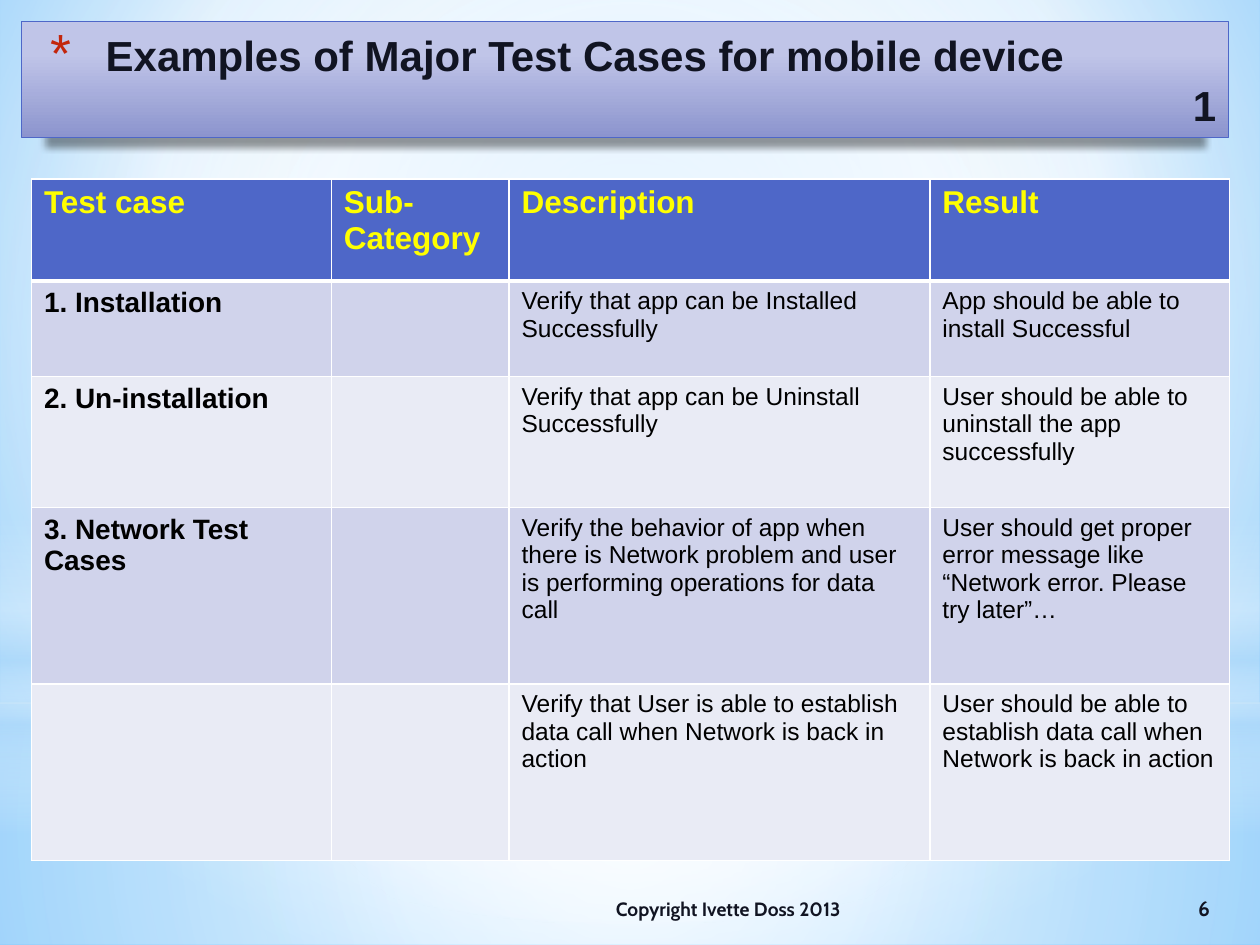
from lxml import etree
from pptx import Presentation
from pptx.dml.color import RGBColor
from pptx.enum import shapes, text
from pptx.oxml.ns import qn
from pptx.util import Inches, Pt

WHITE = RGBColor(0xFF, 0xFF, 0xFF)
SKY = RGBColor(0xB4, 0xDC, 0xFA)
BLUE = RGBColor(0x4E, 0x67, 0xC8)
BAND_DARK = RGBColor(0xD0, 0xD3, 0xEB)
BAND_LIGHT = RGBColor(0xE9, 0xEB, 0xF5)
YELLOW = RGBColor(0xFF, 0xFF, 0x00)
BLACK = RGBColor(0, 0, 0)
INK = RGBColor(0x11, 0x14, 0x22)
RED = RGBColor(0xC3, 0x26, 0x0C)
BACKDROP = [(0, RGBColor(0x9E, 0xD5, 0xFF), 100), (60, WHITE, 100),
            (100, RGBColor(0x5B, 0xB9, 0xFF), 100)]
TITLE_FILL = [(28, RGBColor(0xC0, 0xC5, 0xE8), 100),
              (100, RGBColor(0x8C, 0x94, 0xCE), 100)]

CENTRE = (50, 50, 50, 50)
RECT, OVAL = shapes.MSO_SHAPE.RECTANGLE, shapes.MSO_SHAPE.OVAL
LAYERS = [
    (RECT, (0, 5.58, 10, 1.92),
     [(0, WHITE, 91), (37, WHITE, 76), (100, SKY, 79)], CENTRE),
    (RECT, (0, 0, 10, 5.58),
     [(0, WHITE, 89), (48, WHITE, 62), (100, SKY, 79)], CENTRE),
    (RECT, (0, 4.12, 10, 2.5),
     [(0, WHITE, 0), (29, WHITE, 30), (45, SKY, 40), (55, WHITE, 26),
      (65, SKY, 60), (100, WHITE, 0)], None),
    (OVAL, (0, 1.75, 10, 5.58), [(0, WHITE, 100), (56, WHITE, 0)], CENTRE),
]

COLUMNS = [2.38, 1.41, 3.34, 2.38]
ROW_HEIGHTS = [0.81, 0.76, 1.04, 1.4, 1.4]
ROWS = [
    ["Test case", "Sub-Category", "Description", "Result"],
    ["1. Installation", "", "Verify that app can be Installed Successfully",
     "App should be able to install Successful"],
    ["2. Un-installation", "", "Verify that app can be Uninstall Successfully",
     "User should be able to uninstall the app successfully"],
    ["3. Network Test Cases", "",
     "Verify the behavior of app when there is Network problem and user is "
     "performing operations for data call",
     "User should get proper error message like “Network error. Please try later”…"],
    ["", "",
     "Verify that User is able to establish data call when Network is back in action",
     "User should be able to establish data call when Network is back in action"],
]


def add_child(parent, tag, **attributes):
    return etree.SubElement(parent, qn(tag),
                            {k: str(v) for k, v in attributes.items()})


def add_color(parent, color, alpha=100):
    clr = add_child(parent, "a:srgbClr", val=color)
    if alpha < 100:
        add_child(clr, "a:alpha", val=alpha * 1000)


def set_gradient(parent, stops, focus=None):
    grad = etree.Element(qn("a:gradFill"), rotWithShape="1")
    stop_list = add_child(grad, "a:gsLst")
    for pos, color, alpha in stops:
        add_color(add_child(stop_list, "a:gs", pos=pos * 1000), color, alpha)
    if focus:
        sides = {side: v * 1000 for side, v in zip("ltrb", focus)}
        add_child(add_child(grad, "a:path", path="circle"),
                  "a:fillToRect", **sides)
    else:
        add_child(grad, "a:lin", ang=90 * 60000, scaled=0)
    parent.replace(parent.find(qn("a:solidFill")), grad)


def add_run(p, words, **fmt):
    r = p.add_run()
    r.text = words
    color = fmt.pop("color")
    for name, value in fmt.items():
        setattr(r.font, name, value)
    r.font.color.rgb = color


def add_gradient_shape(s, kind, box, stops, focus=None):
    sp = s.shapes.add_shape(kind, *map(Inches, box))
    sp.shadow.inherit = False
    sp.fill.solid()
    set_gradient(sp._element.spPr, stops, focus)
    sp.line.fill.background()
    return sp


def add_background(s):
    s.background.fill.solid()
    set_gradient(s._element.find(".//" + qn("p:bgPr")), BACKDROP, (20, 10, 20, 60))
    for layer in LAYERS:
        add_gradient_shape(s, *layer)


def add_title(s):
    sp = add_gradient_shape(s, RECT, (0.17, 0.17, 9.58, 0.92), TITLE_FILL)
    sp.line.color.rgb = BLUE
    sp.line.width = Pt(0.75)
    shadow = add_child(sp._element.spPr.find(qn("a:effectLst")), "a:outerShdw",
                       blurRad=Pt(4), dist=Pt(5), dir=5400000,
                       sx=96000, sy=100000, algn="b", rotWithShape=0)
    add_color(shadow, BLACK, 40)
    tf = sp.text_frame
    tf.word_wrap = True
    tf.vertical_anchor = text.MSO_ANCHOR.MIDDLE
    lines = [("Examples of Major Test Cases for mobile device", text.PP_ALIGN.LEFT),
             ("1", text.PP_ALIGN.RIGHT)]
    for i, (words, align) in enumerate(lines):
        p = tf.add_paragraph() if i else tf.paragraphs[0]
        p.alignment = align
        add_run(p, words, size=Pt(24), name="Arial", bold=True, color=INK)
    pPr = tf.paragraphs[0]._p.get_or_add_pPr()
    pPr.set("marL", str(Inches(0.57)))
    pPr.set("indent", str(Inches(-0.44)))
    add_color(add_child(pPr, "a:buClr"), RED)
    add_child(pPr, "a:buSzPct", val=128000)
    add_child(pPr, "a:buFont", typeface="Arial")
    add_child(pPr, "a:buChar", char="*")


def set_borders(cell, widths):
    tcPr = cell._tc.get_or_add_tcPr()
    for i, (side, width) in enumerate(zip("LRTB", widths)):
        ln = etree.Element(qn("a:ln" + side), w=str(Pt(width)))
        add_color(add_child(ln, "a:solidFill"), WHITE)
        tcPr.insert(i, ln)


def cell_style(row, col):
    if row == 0:
        return dict(size=Pt(18), bold=True, color=YELLOW)
    return dict(size=Pt(14 if col else 16), bold=col == 0, color=BLACK)


def add_test_table(s):
    frame = s.shapes.add_table(len(ROWS), len(COLUMNS), Inches(0.25), Inches(1.42),
                               Inches(9.5), Inches(5.42))
    table = frame.table
    for column, width in zip(table.columns, COLUMNS):
        column.width = Inches(width)
    for i, (row, height) in enumerate(zip(ROWS, ROW_HEIGHTS)):
        table.rows[i].height = Inches(height)
        fill = BLUE if i == 0 else BAND_DARK if i % 2 else BAND_LIGHT
        for j, words in enumerate(row):
            cell = table.cell(i, j)
            cell.fill.solid()
            cell.fill.fore_color.rgb = fill
            set_borders(cell, (1, 1, 3 if i == 1 else 1, 3 if i == 0 else 1))
            if words:
                add_run(cell.text_frame.paragraphs[0], words, name="Arial",
                        **cell_style(i, j))


def add_footer(s, words, left, width, size, align):
    tf = s.shapes.add_textbox(*map(Inches, (left, 7.01, width, 0.4))).text_frame
    tf.word_wrap = True
    tf.vertical_anchor = text.MSO_ANCHOR.MIDDLE
    p = tf.paragraphs[0]
    p.alignment = align
    add_run(p, words, size=Pt(size), name="Cabin", bold=True, color=INK)


def main():
    prs = Presentation()
    prs.slide_width, prs.slide_height = Inches(10), Inches(7.5)
    s = prs.slides.add_slide(prs.slide_layouts[6])
    add_background(s)
    add_test_table(s)
    add_footer(s, "Copyright Ivette Doss 2013", 4.79, 4.46, 11, text.PP_ALIGN.LEFT)
    add_footer(s, "6", 9.25, 0.61, 12, text.PP_ALIGN.CENTER)
    add_title(s)
    prs.save("out.pptx")


if __name__ == "__main__":
    main()
